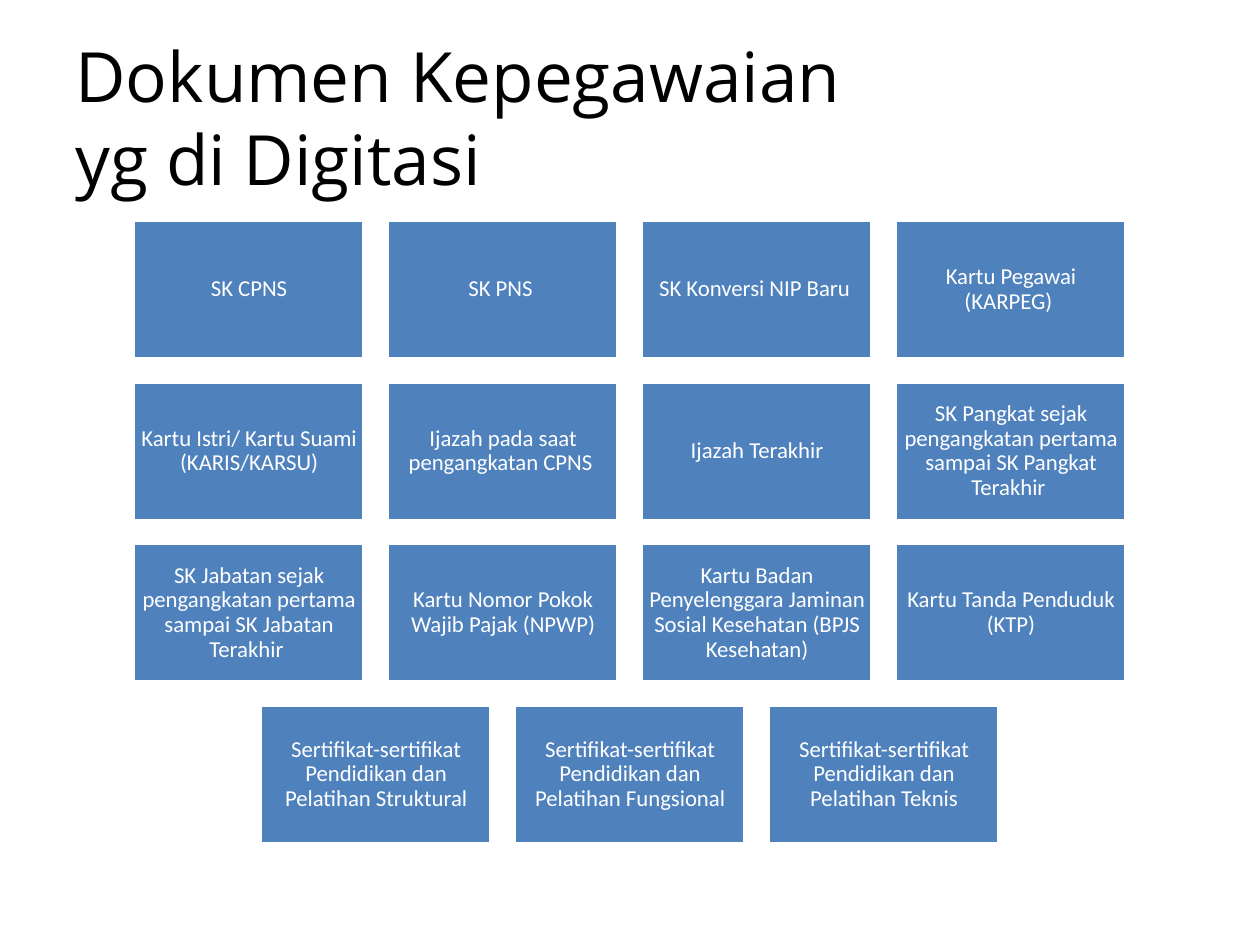
from dataclasses import dataclass

from pptx import Presentation
from pptx.dml.color import RGBColor
from pptx.enum.shapes import MSO_SHAPE
from pptx.enum.text import MSO_ANCHOR, PP_ALIGN
from pptx.slide import Slide
from pptx.util import Cm, Pt

BLUE = RGBColor(0x4F, 0x81, 0xBD)
WHITE = RGBColor(0xFF, 0xFF, 0xFF)
BLACK = RGBColor(0x00, 0x00, 0x00)

# Grid of cards, in centimetres
MID = 12.7
TOP = 4.44
WIDTH, HEIGHT = 4.65, 2.79
GAP = 0.47

ROWS = [
    ["SK CPNS", "SK PNS ", "SK Konversi NIP Baru ", "Kartu Pegawai (KARPEG) "],
    [
        "Kartu Istri/ Kartu Suami (KARIS/KARSU)",
        "Ijazah pada saat pengangkatan CPNS ",
        "Ijazah Terakhir",
        "SK Pangkat sejak pengangkatan pertama sampai SK Pangkat Terakhir ",
    ],
    [
        "SK Jabatan sejak pengangkatan pertama sampai SK Jabatan Terakhir ",
        "Kartu Nomor Pokok Wajib Pajak (NPWP)",
        "Kartu Badan Penyelenggara Jaminan Sosial Kesehatan (BPJS Kesehatan)",
        "Kartu Tanda Penduduk (KTP)",
    ],
    [
        f"Sertifikat-sertifikat Pendidikan dan Pelatihan {kind}"
        for kind in ("Struktural", "Fungsional", "Teknis")
    ],
]


@dataclass
class Card:
    text: str
    left: float
    top: float


def place_cards() -> list[Card]:
    """Centre each row of cards on the slide."""
    cards = []
    for row, texts in enumerate(ROWS):
        span = len(texts) * (WIDTH + GAP) - GAP
        for col, text in enumerate(texts):
            left = MID - span / 2 + col * (WIDTH + GAP)
            cards.append(Card(text, left, TOP + row * (HEIGHT + GAP)))
    return cards


def draw_card(slide: Slide, card: Card) -> None:
    box = slide.shapes.add_shape(
        MSO_SHAPE.RECTANGLE, Cm(card.left), Cm(card.top), Cm(WIDTH), Cm(HEIGHT)
    )
    box.shadow.inherit = False
    box.fill.solid()
    box.fill.fore_color.rgb = BLUE
    box.line.color.rgb = WHITE
    box.line.width = Pt(2)

    frame = box.text_frame
    frame.text = card.text
    frame.word_wrap = True
    frame.vertical_anchor = MSO_ANCHOR.MIDDLE
    frame.margin_left = frame.margin_right = Cm(0.13)
    frame.margin_top = frame.margin_bottom = Cm(0.13)
    para = frame.paragraphs[0]
    para.alignment = PP_ALIGN.CENTER
    para.line_spacing = 0.9
    font = para.runs[0].font
    font.name, font.size = "Calibri", Pt(13)
    font.color.rgb = WHITE


def draw_title(slide: Slide, text: str) -> None:
    box = slide.shapes.add_textbox(Cm(1.27), Cm(0.76), Cm(17.42), Cm(3.18))
    frame = box.text_frame
    frame.text = text
    frame.word_wrap = True
    frame.vertical_anchor = MSO_ANCHOR.MIDDLE
    font = frame.paragraphs[0].runs[0].font
    font.name, font.size = "Open Sans", Pt(39.6)
    font.color.rgb = BLACK


def main() -> None:
    deck = Presentation()
    deck.slide_width, deck.slide_height = Cm(25.4), Cm(19.05)
    slide = deck.slides.add_slide(deck.slide_layouts[6])

    # Title
    draw_title(slide, "Dokumen Kepegawaian yg di Digitasi")

    # Document cards
    for card in place_cards():
        draw_card(slide, card)

    deck.save("out.pptx")


if __name__ == "__main__":
    main()
